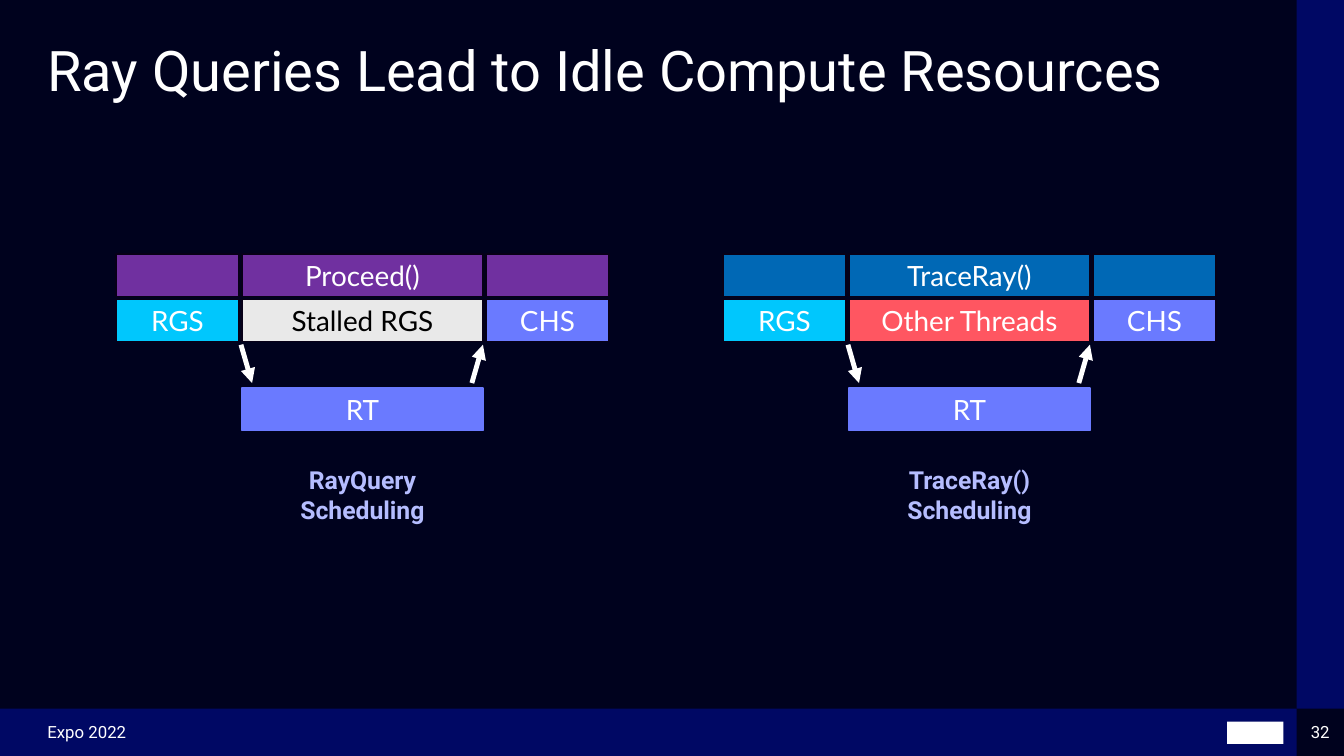
from dataclasses import dataclass

from lxml import etree
from pptx import Presentation
from pptx import util as u
from pptx.dml import color
from pptx.enum import shapes, text
from pptx.oxml import ns


@dataclass(frozen=True)
class Theme:
    night: str = "00021E"
    band: str = "000864"
    edge: str = "070017"
    white: str = "FFFFFF"
    black: str = "000000"
    lilac: str = "B5BDFF"
    violet: str = "6A7AFF"
    purple: str = "7030A0"
    blue: str = "0068B5"
    cyan: str = "00C7FD"
    grey: str = "E9E9E9"
    red: str = "FF5661"
    heading_font: str = "Roboto"
    block_font: str = "Lato"
    title_size: float = 40
    block_size: float = 19.9
    caption_size: float = 17.7
    footer_size: float = 12


def rgb(value):
    return color.RGBColor.from_string(value)


def write(frame, words, *, size, font, ink, bold=False, align="LEFT",
          anchor="MIDDLE", inset=None, spacing=None):
    frame.word_wrap = True
    frame.auto_size = text.MSO_AUTO_SIZE.NONE
    frame.vertical_anchor = text.MSO_ANCHOR[anchor]
    if inset is not None:
        frame.margin_left = frame.margin_right = u.Inches(inset)
        frame.margin_top = frame.margin_bottom = u.Inches(inset)
    para = frame.paragraphs[0]
    para.alignment = text.PP_ALIGN[align]
    if spacing:
        para.line_spacing = spacing
    span = para.add_run()
    span.text = words
    span.font.size = u.Pt(size)
    span.font.name = font
    span.font.bold = bold
    span.font.color.rgb = rgb(ink)


class SlideBuilder:
    """Draw themed elements on one slide."""

    def __init__(self, page, theme):
        self.page = page
        self.theme = theme
        page.background.fill.solid()
        page.background.fill.fore_color.rgb = rgb(theme.night)

    def title(self, words, *place):
        box = self.page.shapes.title
        box.left, box.top, box.width, box.height = map(u.Inches, place)
        write(box.text_frame, words, size=self.theme.title_size,
              font=self.theme.heading_font, ink=self.theme.white,
              anchor="TOP", inset=0, spacing=0.83)

    def panel(self, fill, *place, line=None):
        box = self.page.shapes.add_shape(
            shapes.MSO_SHAPE.RECTANGLE, *map(u.Inches, place))
        box.shadow.inherit = False
        box.fill.solid()
        box.fill.fore_color.rgb = rgb(fill)
        if line:
            box.line.color.rgb = rgb(line)
            box.line.width = u.Pt(1)
        else:
            box.line.fill.background()
        return box

    def block(self, words, fill, *place, line=None, ink=None):
        box = self.panel(fill, *place, line=line or self.theme.edge)
        if words:
            write(box.text_frame, words, size=self.theme.block_size,
                  font=self.theme.block_font, ink=ink or self.theme.white,
                  align="CENTER")

    def label(self, words, *place, **style):
        box = self.page.shapes.add_textbox(*map(u.Inches, place))
        write(box.text_frame, words, font=self.theme.heading_font, **style)

    def arrow(self, *ends):
        line = self.page.shapes.add_connector(
            shapes.MSO_CONNECTOR.STRAIGHT, *map(u.Inches, ends))
        line.line.color.rgb = rgb(self.theme.white)
        line.line.width = u.Pt(3.5)
        properties = line.element.spPr
        stroke = properties.find(ns.qn("a:ln"))
        etree.SubElement(stroke, ns.qn("a:tailEnd"), type="triangle")
        etree.SubElement(properties, ns.qn("a:effectLst"))

    def schedule(self, left, call, call_fill, middle, middle_fill, middle_ink, caption):
        theme = self.theme
        columns = [(left, 1.22), (left + 1.25, 2.39), (left + 3.67, 1.22)]
        calls = ["", call, ""]
        stages = [("RGS", theme.cyan, theme.white),
                  (middle, middle_fill, middle_ink),
                  ("CHS", theme.violet, theme.white)]
        for (x, width), name, (stage, fill, ink) in zip(columns, calls, stages):
            self.block(name, call_fill, x, 2.52, width, 0.42)
            self.block(stage, fill, x, 2.97, width, 0.42, ink=ink)
        x, width = columns[1]
        self.block("RT", theme.violet, x, 3.85, width, 0.42, line=theme.violet)
        self.arrow(x - 0.01, 3.42, x + 0.1, 3.8)
        self.arrow(x + width - 0.11, 3.8, x + width, 3.42)
        self.label(caption, x + 0.37, 4.56, 1.65, 0.7, size=theme.caption_size,
                   ink=theme.lilac, bold=True, align="CENTER", anchor="TOP")


def main():
    deck = Presentation()
    deck.slide_width, deck.slide_height = u.Inches(13.33), u.Inches(7.5)
    theme = Theme()
    slide = SlideBuilder(deck.slides.add_slide(deck.slide_layouts[5]), theme)
    slide.panel(theme.band, 0, 7.03, 12.86, 0.47)
    slide.panel(theme.band, 12.86, 0, 0.47, 7.03)
    slide.panel(theme.white, 12.17, 7.16, 0.56, 0.22)
    slide.title("Ray Queries Lead to Idle Compute Resources", 0.47, 0.47, 11.91, 1.34)
    footer = dict(size=theme.footer_size, ink=theme.white, inset=0)
    slide.label("Expo 2022", 0.47, 7.03, 3.52, 0.47, **footer)
    slide.label("32", 12.86, 7.03, 0.47, 0.47, align="CENTER", **footer)
    slide.schedule(1.15, "Proceed()", theme.purple, "Stalled RGS", theme.grey,
                   theme.black, "RayQuery Scheduling")
    slide.schedule(7.17, "TraceRay()", theme.blue, "Other Threads", theme.red,
                   theme.white, "TraceRay() Scheduling")
    deck.save("out.pptx")


if __name__ == "__main__":
    main()
